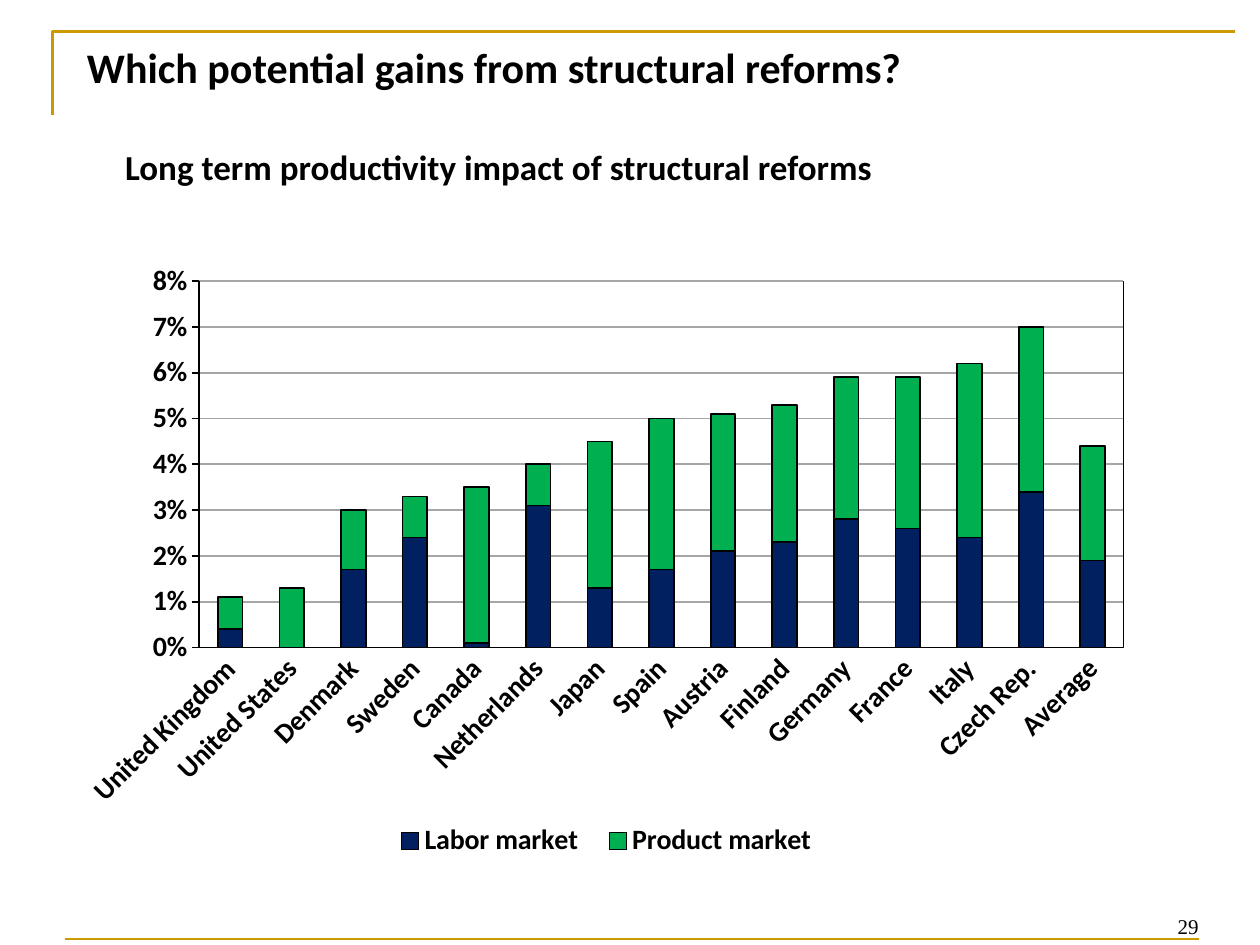
from lxml import etree
from pptx import Presentation
from pptx import util as u
from pptx.chart.data import CategoryChartData
from pptx.dml.color import RGBColor
from pptx.enum import chart as ch, shapes, text
from pptx.oxml import parse_xml
from pptx.oxml.ns import nsdecls, qn

Pt = u.Pt
GOLD = RGBColor(0xCC, 0x99, 0x00)
BLACK = RGBColor(0, 0, 0)
GRAY = RGBColor(0xA6, 0xA6, 0xA6)
NAVY = RGBColor(0x00, 0x20, 0x60)
GREEN = RGBColor(0x00, 0xB0, 0x50)

# country, labor market gain, product market gain
GAINS = [
    ("United Kingdom", 0.004, 0.007),
    ("United States", 0, 0.013),
    ("Denmark", 0.017, 0.013),
    ("Sweden", 0.024, 0.009),
    ("Canada", 0.001, 0.034),
    ("Netherlands", 0.031, 0.009),
    ("Japan", 0.013, 0.032),
    ("Spain", 0.017, 0.033),
    ("Austria", 0.021, 0.03),
    ("Finland", 0.023, 0.03),
    ("Germany", 0.028, 0.031),
    ("France", 0.026, 0.033),
    ("Italy", 0.024, 0.038),
    ("Czech Rep.", 0.034, 0.036),
    ("Average", 0.019, 0.025),
]


def manual_layout(x, y, w, h, inner=False):
    """Chart layout element; lengths are fractions of the chart."""
    target = '<c:layoutTarget val="inner"/>' if inner else ""
    return parse_xml(
        f'<c:layout {nsdecls("c")}><c:manualLayout>{target}'
        '<c:xMode val="edge"/><c:yMode val="edge"/>'
        f'<c:x val="{x}"/><c:y val="{y}"/><c:w val="{w}"/><c:h val="{h}"/>'
        '</c:manualLayout></c:layout>')


def set_layout(parent, layout, index):
    for old in parent.findall(qn("c:layout")):
        parent.remove(old)
    parent.insert(index, layout)


class Deck:
    font = "Calibri"

    def __init__(self, slide):
        self.s = slide

    def style_font(self, font, size, bold=True, name=None):
        font.name, font.size, font.bold = name or self.font, Pt(size), bold
        font.color.rgb = BLACK

    def style_line(self, line, color=BLACK, width=1):
        line.color.rgb, line.width = color, Pt(width)

    def fill_text(self, sp, words, size, box, inset=(7.2, 3.6),
                  anchor=text.MSO_ANCHOR.TOP, align=text.PP_ALIGN.LEFT, **font):
        sp.left, sp.top, sp.width, sp.height = (Pt(v) for v in box)
        tf = sp.text_frame
        tf.word_wrap, tf.auto_size = True, text.MSO_AUTO_SIZE.NONE
        tf.vertical_anchor = anchor
        tf.margin_left, tf.margin_top = Pt(inset[0]), Pt(inset[1])
        p = tf.paragraphs[0]
        p.alignment = align
        r = p.add_run()
        r.text = words
        self.style_font(r.font, size, **font)

    def title(self, words, size, box, **kw):
        self.fill_text(self.s.shapes.title, words, size, box, **kw)

    def text(self, words, size, box, **kw):
        sp = self.s.shapes.add_textbox(*(Pt(v) for v in box))
        self.fill_text(sp, words, size, box, **kw)

    def rule(self, x1, y1, x2, y2):
        c = self.s.shapes.add_connector(
            shapes.MSO_CONNECTOR.STRAIGHT, Pt(x1), Pt(y1), Pt(x2), Pt(y2))
        self.style_line(c.line, GOLD, 1.5)
        etree.SubElement(c._element.spPr, qn("a:effectLst"))

    def corner(self, points):
        fb = self.s.shapes.build_freeform(*(Pt(v) for v in points[0]))
        fb.add_line_segments([(Pt(x), Pt(y)) for x, y in points[1:]], close=False)
        sp = fb.convert_to_shape()
        sp.shadow.inherit = False
        sp.fill.background()
        self.style_line(sp.line, GOLD, 1.5)

    def stacked_columns(self, rows, series, box):
        """series: list of (name, colour), in the order of the row values."""
        cats, *columns = zip(*rows)
        data = CategoryChartData(number_format="0%")
        data.categories = cats
        for (name, _), values in zip(series, columns):
            data.add_series(name, values)
        chart = self.s.shapes.add_chart(
            ch.XL_CHART_TYPE.COLUMN_STACKED, *(Pt(v) for v in box), data).chart
        self.style_font(chart.font, 10, bold=False, name="Arial")
        chart.has_title = False
        plot = chart.plots[0]
        plot.gap_width, plot.overlap, plot.vary_by_categories = 150, 100, False
        for ser, (_, color) in zip(plot.series, series):
            ser.format.fill.solid()
            ser.format.fill.fore_color.rgb = color
            self.style_line(ser.format.line)
        self.axes(chart)
        self.legend(chart)
        area = chart._chartSpace.chart.plotArea
        set_layout(area, manual_layout(0.123, 0.047, 0.856, 0.588, inner=True), 0)
        area.append(parse_xml(
            f'<c:spPr {nsdecls("c", "a")}><a:noFill/><a:ln w="9525"><a:solidFill>'
            f'<a:srgbClr val="{BLACK}"/></a:solidFill></a:ln></c:spPr>'))

    def axes(self, chart):
        cat, val = chart.category_axis, chart.value_axis
        for axis, tick in ((cat, ch.XL_TICK_MARK.NONE), (val, ch.XL_TICK_MARK.OUTSIDE)):
            axis.major_tick_mark = tick
            axis.minor_tick_mark = ch.XL_TICK_MARK.NONE
            self.style_font(axis.tick_labels.font, 16)
            self.style_line(axis.format.line)
        cat.has_major_gridlines = False
        body = cat._element.find(qn("c:txPr")).find(qn("a:bodyPr"))
        body.set("rot", "-2700000")
        body.set("vert", "horz")
        val.minimum_scale, val.maximum_scale, val.major_unit = 0, 0.08, 0.01
        val.tick_labels.number_format = "0%"
        val.tick_labels.number_format_is_linked = False
        val.has_major_gridlines = True
        self.style_line(val.major_gridlines.format.line, GRAY)

    def legend(self, chart):
        chart.has_legend = True
        legend = chart.legend
        legend.position = ch.XL_LEGEND_POSITION.BOTTOM
        legend.include_in_layout = False
        self.style_font(legend.font, 16)
        set_layout(legend._element, manual_layout(0.29, 0.91, 0.42, 0.07), 1)


def main():
    prs = Presentation()
    prs.slide_width, prs.slide_height = Pt(720), Pt(540)
    deck = Deck(prs.slides.add_slide(prs.slide_layouts[5]))
    deck.corner([(30, 66), (30, 18), (706, 18)])
    deck.rule(37, 536.5, 685, 536.5)
    deck.title("Which potential gains from structural reforms?", 24,
               (37, 19, 648, 70), inset=(12.7, 5))
    deck.text("Long term productivity impact of structural reforms", 20,
              (37, 55, 683, 448), inset=(34.5, 28))
    deck.text("29", 12, (524, 504, 168, 36), anchor=text.MSO_ANCHOR.BOTTOM,
              align=text.PP_ALIGN.RIGHT, bold=False, name="Times New Roman")
    deck.stacked_columns(GAINS, [("Labor market", NAVY), ("Product market", GREEN)],
                         (38, 144, 617, 356))
    prs.save("out.pptx")


if __name__ == "__main__":
    main()
